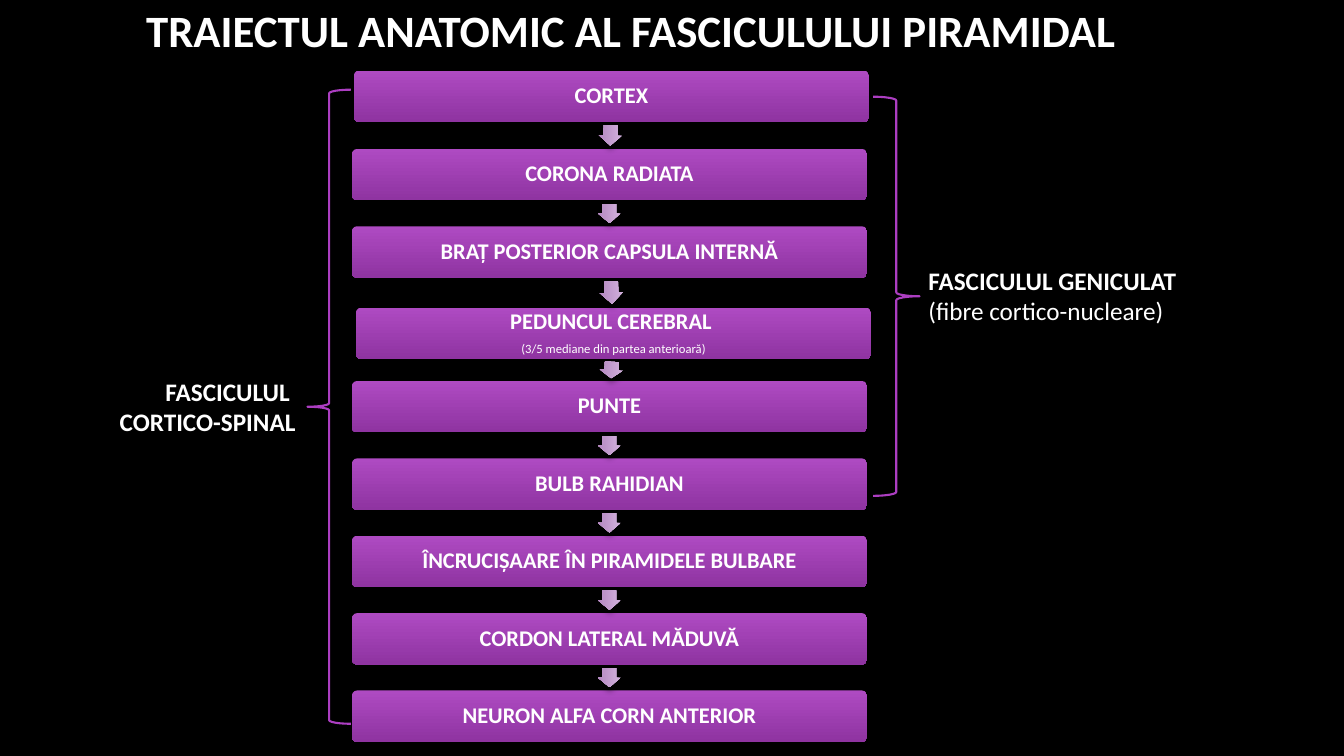
import math
from dataclasses import dataclass

import pptx
import pptx.dml.color
import pptx.enum.shapes
import pptx.enum.text
import pptx.oxml
import pptx.oxml.ns
import pptx.util

Inches = pptx.util.Inches
Pt = pptx.util.Pt
RGB = pptx.dml.color.RGBColor.from_string
SHAPE = pptx.enum.shapes.MSO_SHAPE
ALIGN = pptx.enum.text.PP_ALIGN
MIDDLE = pptx.enum.text.MSO_ANCHOR.MIDDLE
TOP = pptx.enum.text.MSO_ANCHOR.TOP


@dataclass(frozen=True)
class Theme:
    font: str = "Calibri"
    back: str = "000000"
    text: str = "FFFFFF"
    box: tuple = ("AE4AC2", "8F34A1")
    arrow: tuple = ("D3B2DD", "B488C1")
    brace: str = "AC3EC1"
    title: int = 32
    label: int = 18
    step: int = 16
    note: int = 9


THEME = Theme()

# Each stage: its lines, then a small shift from the regular column
STAGES = [
    (["CORTEX"], 0.02, -0.01),
    (["CORONA RADIATA"], 0, 0),
    (["BRAȚ POSTERIOR CAPSULA INTERNĂ"], 0, 0),
    (["PEDUNCUL CEREBRAL ", "(3/5 mediane din partea anterioară)"], 0.04, 0.04),
    (["PUNTE"], 0, 0),
    (["BULB RAHIDIAN"], 0, 0),
    (["ÎNCRUCIȘAARE ÎN PIRAMIDELE BULBARE"], 0, 0),
    (["CORDON LATERAL MĂDUVĂ"], 0, 0),
    (["NEURON ALFA CORN ANTERIOR"], 0, 0),
]
LEFT, START, PITCH = 3.49, 0.71, 0.7675
WIDE, HIGH = 5.11, 0.51

SHADOW = (
    '<a:outerShdw %s blurRad="50800" dist="38100" dir="5400000" rotWithShape="0">'
    '<a:srgbClr val="000000"><a:alpha val="35000"/></a:srgbClr></a:outerShdw>'
    % pptx.oxml.ns.nsdecls("a")
)


def write(frame, lines, sizes, bolds, align=ALIGN.LEFT, anchor=MIDDLE,
          inset=None, spacing=None, after=None, wrap=True):
    """Fill a text frame, one paragraph per line."""
    frame.word_wrap = wrap
    frame.auto_size = pptx.enum.text.MSO_AUTO_SIZE.NONE
    frame.vertical_anchor = anchor
    if inset is not None:
        frame.margin_left = frame.margin_right = Inches(inset)
        frame.margin_top = frame.margin_bottom = Inches(inset)
    for i, (line, size, bold) in enumerate(zip(lines, sizes, bolds)):
        para = frame.paragraphs[0] if i == 0 else frame.add_paragraph()
        para.alignment = align
        if spacing is not None:
            para.line_spacing = spacing
        if after is not None:
            para.space_after = Pt(after)
        run = para.add_run()
        run.text = line
        run.font.name = THEME.font
        run.font.size = Pt(size)
        run.font.bold = bold
        run.font.color.rgb = RGB(THEME.text)


def block(slide, kind, left, top, width, height, colors, adjust):
    """Add a shape with a vertical gradient and a soft shadow."""
    shape = slide.shapes.add_shape(
        kind, Inches(left), Inches(top), Inches(width), Inches(height))
    for i, value in enumerate(adjust):
        shape.adjustments[i] = value
    shape.fill.gradient()
    shape.fill.gradient_angle = 270
    for stop, color, place in zip(shape.fill.gradient_stops, colors, (0, 1)):
        stop.color.rgb = RGB(color)
        stop.position = place
    shape.line.fill.background()
    shape.shadow.inherit = False
    effects = shape._element.spPr.find(pptx.oxml.ns.qn("a:effectLst"))
    effects.append(pptx.oxml.parse_xml(SHADOW))
    return shape


def stage(slide, lines, left, top):
    box = block(slide, SHAPE.ROUNDED_RECTANGLE, left, top, WIDE, HIGH,
                THEME.box, [0.1])
    write(box.text_frame, lines, (THEME.step, THEME.note), (True, False),
          align=ALIGN.CENTER, inset=0.08, spacing=0.9, after=6)


def arrow(slide, here, there):
    """Centre an arrow in the gap, pointing from one box to the next."""
    dx, dy = there[0] - here[0], there[1] - here[1]
    size, thick = 0.75 * (dy - HIGH), 0.23
    x = (here[0] + there[0] + WIDE) / 2
    y = (here[1] + there[1] + HIGH) / 2
    shape = block(slide, SHAPE.RIGHT_ARROW, x - size / 2, y - thick / 2,
                  size, thick, THEME.arrow, [0.6, 0.5])
    shape.rotation = math.degrees(math.atan2(dy, dx))


def brace(slide, kind, left, top, width, height):
    shape = slide.shapes.add_shape(
        kind, Inches(left), Inches(top), Inches(width), Inches(height))
    shape.fill.background()
    shape.line.color.rgb = RGB(THEME.brace)
    shape.line.width = Pt(1.5)
    shape.shadow.inherit = False


def label(slide, lines, left, top, width, height, **style):
    box = slide.shapes.add_textbox(
        Inches(left), Inches(top), Inches(width), Inches(height))
    write(box.text_frame, lines, [THEME.label] * len(lines), anchor=TOP, **style)


def main():
    deck = pptx.Presentation()
    deck.slide_width, deck.slide_height = Inches(13.33), Inches(7.5)
    slide = deck.slides.add_slide(deck.slide_layouts[5])
    slide.background.fill.solid()
    slide.background.fill.fore_color.rgb = RGB(THEME.back)

    # Title
    title = slide.shapes.title
    title.left, title.top = Inches(0.72), Inches(-0.19)
    title.width, title.height = Inches(11.08), Inches(0.96)
    write(title.text_frame, ["TRAIECTUL ANATOMIC AL FASCICULULUI PIRAMIDAL"],
          [THEME.title], [True], align=ALIGN.CENTER)

    # Column of stages, with arrows between them
    spots = [(LEFT + dx, START + PITCH * i + dy)
             for i, (_, dx, dy) in enumerate(STAGES)]
    for (lines, _, _), spot in zip(STAGES, spots):
        stage(slide, lines, *spot)
    for here, there in zip(spots, spots[1:]):
        arrow(slide, here, there)

    # Braces and the tracts they name
    brace(slide, SHAPE.LEFT_BRACE, 3.05, 0.89, 0.43, 6.29)
    brace(slide, SHAPE.RIGHT_BRACE, 8.66, 0.96, 0.46, 3.96)
    label(slide, ["FASCICULUL ", "CORTICO-SPINAL"], 0.56, 3.68, 2.47, 0.71,
          bolds=(True, True), align=ALIGN.RIGHT)
    label(slide, ["FASCICULUL GENICULAT", "(fibre cortico-nucleare)"],
          9.11, 2.58, 2.68, 0.71, bolds=(True, False), wrap=False)

    deck.save("out.pptx")


if __name__ == "__main__":
    main()
